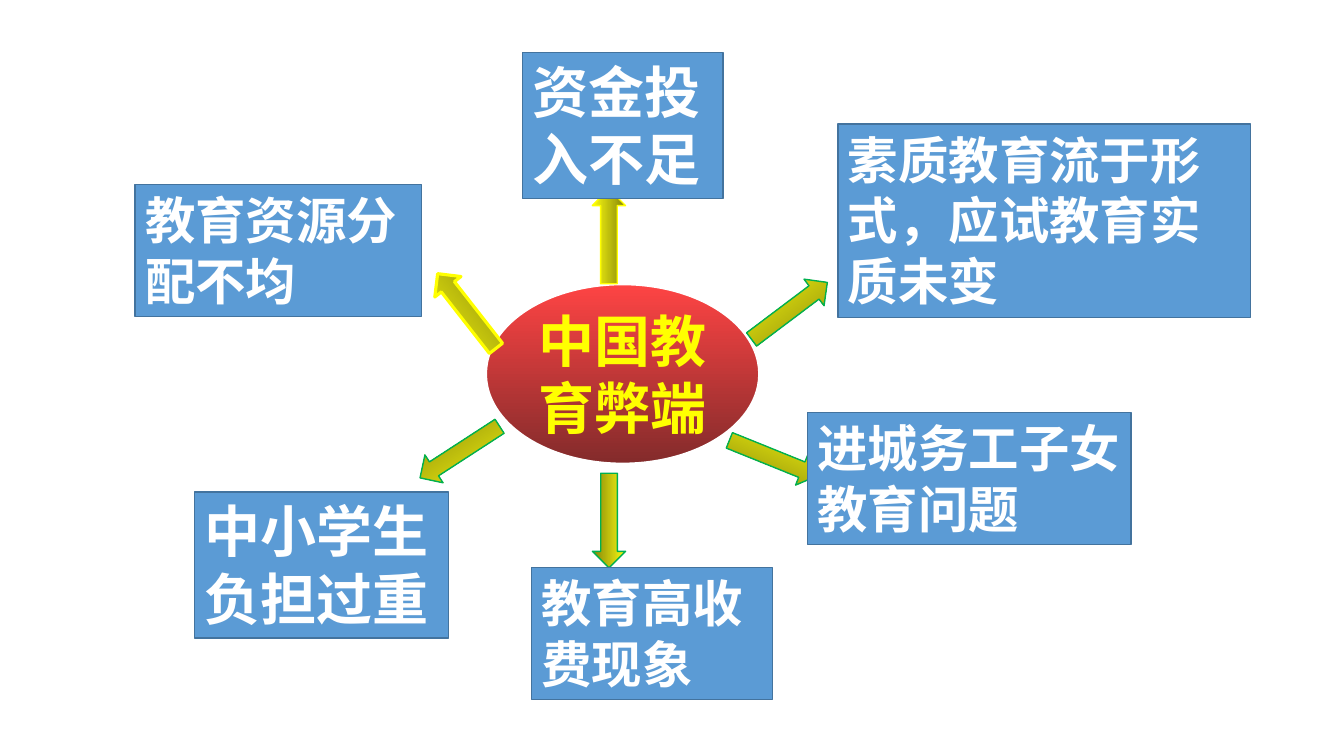
from dataclasses import dataclass

from lxml import etree
from pptx import Presentation
from pptx import util as u
from pptx.dml.color import RGBColor
from pptx.enum import shapes, text
from pptx.oxml import ns

PX = u.Inches(1) // 100
FONT = "Noto Sans CJK SC"
ARROW_W, ARROW_H = 94, 33
COLORS = {
    "white": "FFFFFF",
    "yellow": "FFFF00",
    "green": "00B050",
    "box": "5B9BD5",
    "box_edge": "43739E",
    "red_top": "FE4444",
    "red_bottom": "832B2B",
    "arrow_top": "FBFB11",
    "arrow_bottom": "838309",
}


@dataclass(frozen=True)
class Arrow:
    left: int
    top: int
    rotation: int
    edge: str = "green"
    edge_pt: float = 1


@dataclass(frozen=True)
class Problem:
    wording: str
    left: int
    top: int
    width: int
    height: int
    size: int = 36


ARROWS = [
    Arrow(557, 218, 270, "yellow"),
    Arrow(409, 432, 147),
    Arrow(736, 292, 323),
    Arrow(720, 438, 22),
    Arrow(557, 500, 90),
    Arrow(416, 292, 232, "yellow", 2.25),
]
PROBLEMS = [
    Problem("资金投入不足", 518, 52, 199, 145, 40),
    Problem("素质教育流于形式，应试教育实质未变", 831, 123, 409, 192),
    Problem("进城务工子女教育问题", 801, 409, 321, 131),
    Problem("教育高收费现象", 527, 563, 239, 131),
    Problem("中小学生负担过重", 193, 488, 252, 145, 40),
    Problem("教育资源分配不均", 134, 183, 284, 131),
]


def rgb(name: str) -> RGBColor:
    return RGBColor.from_string(COLORS[name])


def add_outlined(slide, kind, left: int, top: int, width: int, height: int,
                 edge: str, edge_pt: float = 1):
    shape = slide.shapes.add_shape(kind, *(n * PX for n in (left, top, width, height)))
    shape.shadow.inherit = False
    shape.line.color.rgb = rgb(edge)
    shape.line.width = u.Pt(edge_pt)
    return shape


def fill_downward(shape, first: str, last: str) -> None:
    """Fill with a gradient running from top to bottom."""
    shape.fill.gradient()
    shape.fill.gradient_angle = 270
    for stop, name in zip(shape.fill.gradient_stops, (first, last)):
        stop.color.rgb = rgb(name)


def write(shape, wording: str, size: int, color: str, align, anchor) -> None:
    frame = shape.text_frame
    frame.word_wrap = True
    frame.vertical_anchor = anchor
    paragraph = frame.paragraphs[0]
    paragraph.text = wording
    paragraph.alignment = align
    font = paragraph.font
    font.size, font.bold, font.name = u.Pt(size), True, FONT
    font.color.rgb = rgb(color)
    defaults = paragraph._p.pPr.find(ns.qn("a:defRPr"))
    etree.SubElement(defaults, ns.qn("a:ea"), typeface=FONT)


def add_topic(slide) -> None:
    topic = add_outlined(slide, shapes.MSO_SHAPE.OVAL, 482, 282, 271, 178, "white", 1.5)
    fill_downward(topic, "red_top", "red_bottom")
    write(topic, "中国教育弊端", 40, "yellow", text.PP_ALIGN.CENTER, text.MSO_ANCHOR.MIDDLE)


def add_arrow(slide, arrow: Arrow) -> None:
    pointer = add_outlined(slide, shapes.MSO_SHAPE.RIGHT_ARROW, arrow.left, arrow.top,
                           ARROW_W, ARROW_H, arrow.edge, arrow.edge_pt)
    pointer.rotation = arrow.rotation
    fill_downward(pointer, "arrow_top", "arrow_bottom")


def add_problem(slide, problem: Problem) -> None:
    box = add_outlined(slide, shapes.MSO_SHAPE.RECTANGLE, problem.left, problem.top,
                       problem.width, problem.height, "box_edge")
    box.fill.solid()
    box.fill.fore_color.rgb = rgb("box")
    write(box, problem.wording, problem.size, "white", text.PP_ALIGN.LEFT, text.MSO_ANCHOR.TOP)
    box.text_frame.auto_size = text.MSO_AUTO_SIZE.SHAPE_TO_FIT_TEXT


def main() -> None:
    deck = Presentation()
    deck.slide_width, deck.slide_height = 1333 * PX, 750 * PX
    slide = deck.slides.add_slide(deck.slide_layouts[6])
    add_topic(slide)
    for arrow in ARROWS:
        add_arrow(slide, arrow)
    for problem in PROBLEMS:
        add_problem(slide, problem)
    deck.save("out.pptx")


if __name__ == "__main__":
    main()
